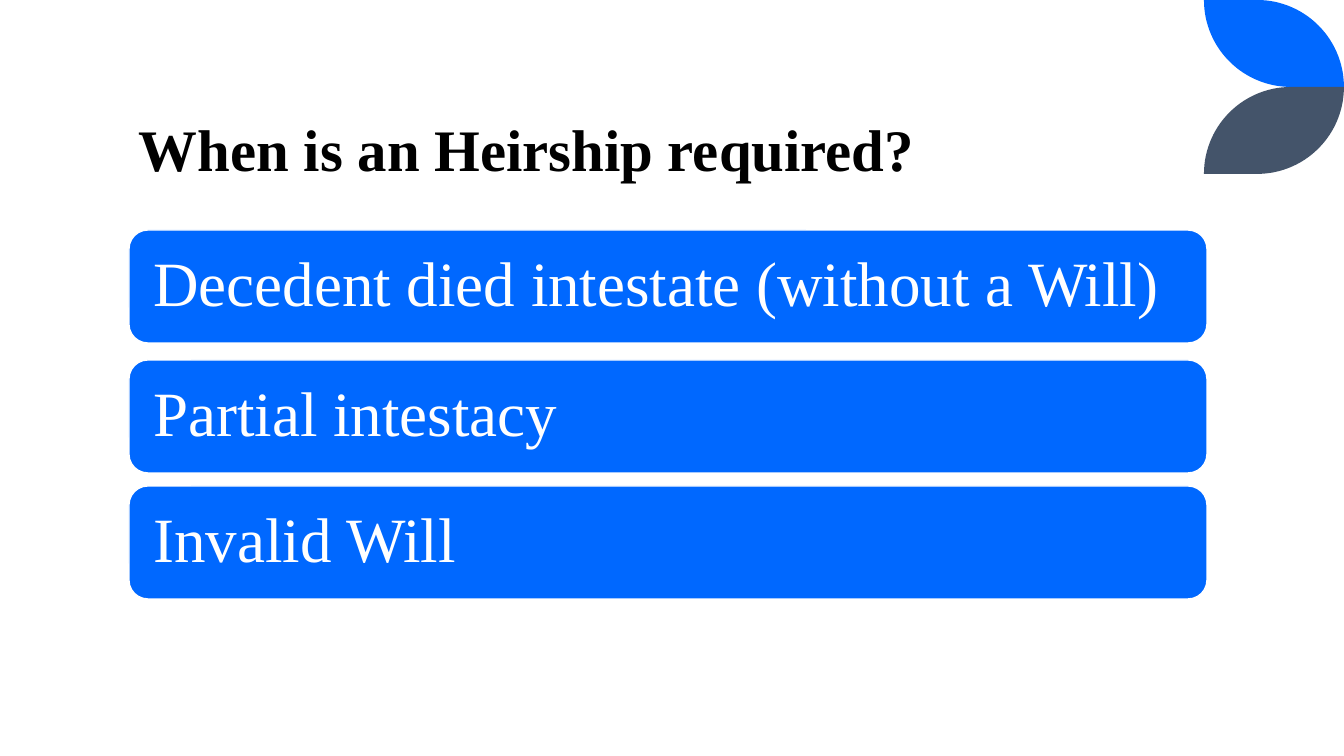
from dataclasses import dataclass
from math import cos, radians, sin

from pptx import Presentation
from pptx.dml.color import RGBColor
from pptx.enum.shapes import MSO_SHAPE
from pptx.enum.text import MSO_ANCHOR, PP_ALIGN
from pptx.util import Emu, Pt

ROUNDED = MSO_SHAPE.ROUNDED_RECTANGLE
MIDDLE, BOTTOM = MSO_ANCHOR.MIDDLE, MSO_ANCHOR.BOTTOM
LEFT = PP_ALIGN.LEFT
EMU_PER_PX = 914400 / 100.8
SLIDE_WIDTH, SLIDE_HEIGHT = 1344, 756
CONTENT_LEFT, CONTENT_WIDTH = 129, 1078
TITLE_TOP, TITLE_HEIGHT = 15, 173
CARD_HEIGHT, CARD_INSET = 113, 19
LEAF_LEFT, LEAF_RADIUS = 1204, 87
ARC_STEP = 3


@dataclass(frozen=True)
class Theme:
    font: str = "Times New Roman"
    blue: RGBColor = RGBColor(0x00, 0x68, 0xFF)
    slate: RGBColor = RGBColor(0x44, 0x54, 0x6A)
    black: RGBColor = RGBColor(0x00, 0x00, 0x00)
    white: RGBColor = RGBColor(0xFF, 0xFF, 0xFF)
    title_size: int = 42
    card_size: int = 45
    border: int = 1


@dataclass(frozen=True)
class Card:
    text: str
    top: int


@dataclass(frozen=True)
class Leaf:
    color: RGBColor
    base: int
    direction: int


THEME = Theme()
CARDS = (
    Card("Decedent died intestate (without a Will)", 230),
    Card("Partial intestacy", 360),
    Card("Invalid Will", 486),
)
LEAVES = (
    Leaf(THEME.blue, 0, 1),
    Leaf(THEME.slate, 2 * LEAF_RADIUS, -1),
)


def px(value: float) -> Emu:
    return Emu(round(value * EMU_PER_PX))


def write(frame, text: str, size: int, color: RGBColor, bold: bool,
          spacing: float, frame_format: dict) -> None:
    for attribute, value in frame_format.items():
        setattr(frame, attribute, value)
    paragraph = frame.paragraphs[0]
    paragraph.alignment = LEFT
    paragraph.line_spacing = spacing
    run = paragraph.add_run()
    run.text = text
    font_format = {"name": THEME.font, "size": Pt(size), "bold": bold}
    for attribute, value in font_format.items():
        setattr(run.font, attribute, value)
    run.font.color.rgb = color


def draw_leaf(shapes, leaf: Leaf) -> None:
    angles = [radians(degree) for degree in range(0, 91, ARC_STEP)]
    upper_center = SLIDE_WIDTH - LEAF_RADIUS
    lower_center = LEAF_LEFT + LEAF_RADIUS
    upper_arc = [(upper_center + LEAF_RADIUS * sin(a),
                  LEAF_RADIUS * (1 - cos(a))) for a in angles]
    lower_arc = [(lower_center - LEAF_RADIUS * sin(a),
                  LEAF_RADIUS * cos(a)) for a in angles]
    outline = [(px(x), px(leaf.base + leaf.direction * y))
               for x, y in upper_arc + lower_arc]
    builder = shapes.build_freeform(*outline[0])
    builder.add_line_segments(outline[1:], close=True)
    petal = builder.convert_to_shape()
    petal.shadow.inherit = False
    petal.fill.solid()
    petal.fill.fore_color.rgb = leaf.color
    petal.line.fill.background()


def draw_title(shapes, text: str) -> None:
    heading = shapes.add_textbox(px(CONTENT_LEFT), px(TITLE_TOP),
                                 px(CONTENT_WIDTH), px(TITLE_HEIGHT))
    write(heading.text_frame, text, THEME.title_size, THEME.black, True, 0.8,
          {"word_wrap": True, "vertical_anchor": BOTTOM})


def draw_card(shapes, card: Card) -> None:
    panel = shapes.add_shape(ROUNDED, px(CONTENT_LEFT), px(card.top),
                             px(CONTENT_WIDTH), px(CARD_HEIGHT))
    panel.shadow.inherit = False
    panel.fill.solid()
    panel.fill.fore_color.rgb = THEME.blue
    panel.line.color.rgb = THEME.white
    panel.line.width = Pt(THEME.border)
    inset = px(CARD_INSET)
    write(panel.text_frame, card.text, THEME.card_size, THEME.white, False, 0.9,
          {"word_wrap": True, "vertical_anchor": MIDDLE,
           "margin_left": inset, "margin_right": inset,
           "margin_top": inset, "margin_bottom": inset})


def main() -> None:
    presentation = Presentation()
    presentation.slide_width = px(SLIDE_WIDTH)
    presentation.slide_height = px(SLIDE_HEIGHT)
    slide = presentation.slides.add_slide(presentation.slide_layouts[6])
    for leaf in LEAVES:
        draw_leaf(slide.shapes, leaf)
    draw_title(slide.shapes, "When is an Heirship required?")
    for card in CARDS:
        draw_card(slide.shapes, card)
    presentation.save("out.pptx")


if __name__ == "__main__":
    main()
